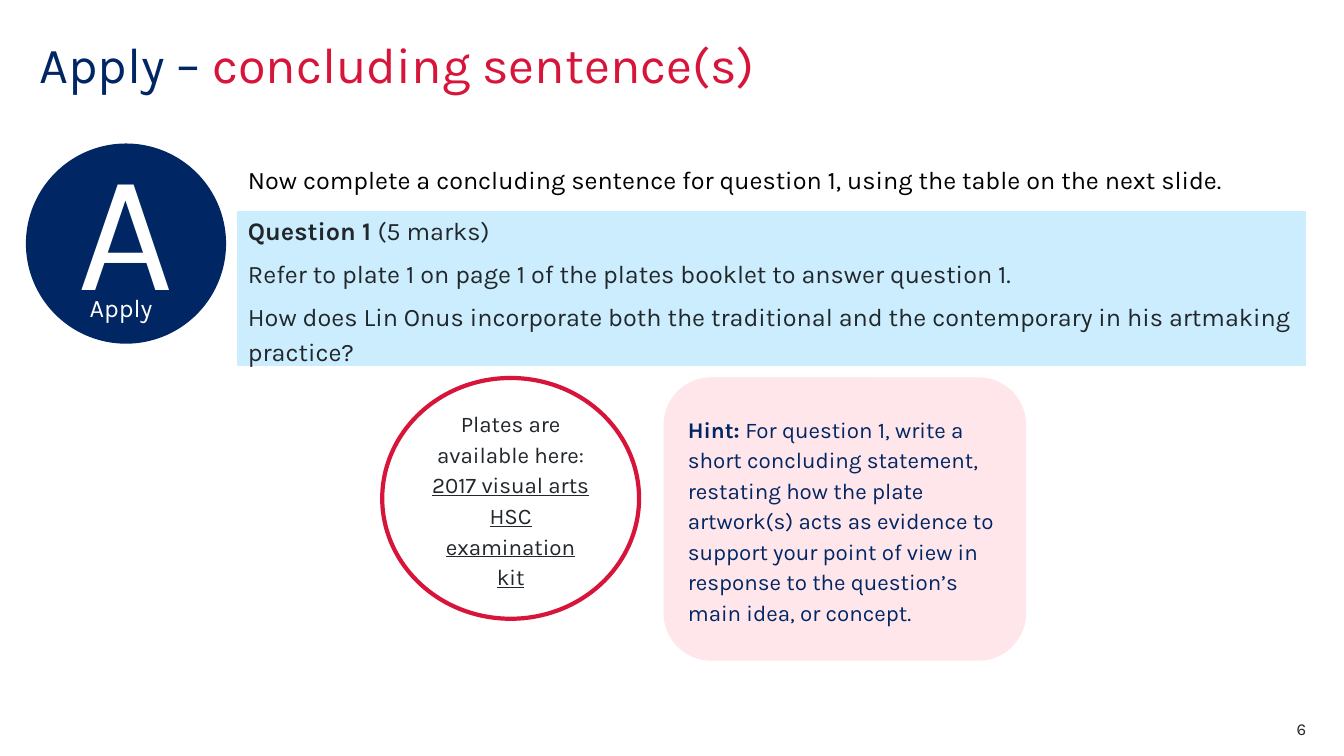
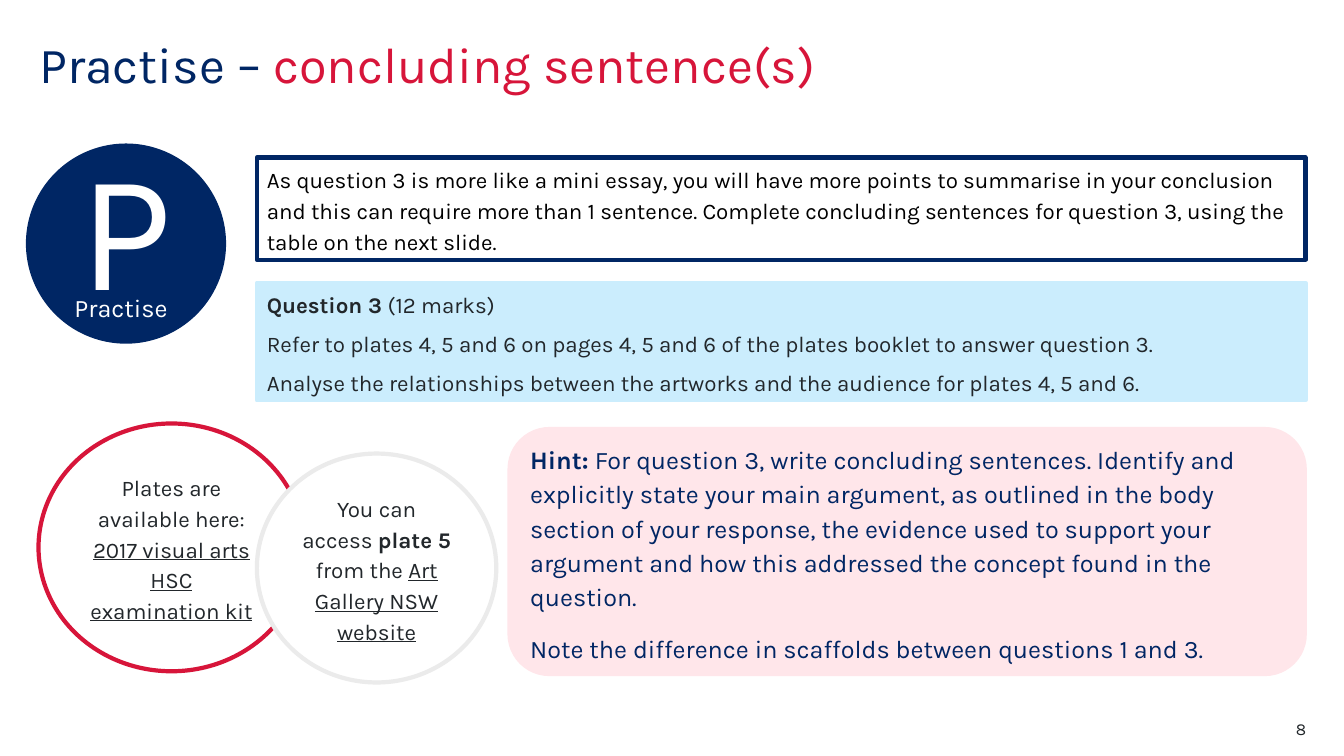
from pptx import Presentation
from pptx.dml.color import RGBColor
from pptx.enum.shapes import MSO_SHAPE
from pptx.enum.text import MSO_ANCHOR, PP_ALIGN
from pptx.util import Pt

FONT = "Karla"
NAVY = "002664"
RED = "D7153A"
INK = "22272B"
BLACK = "000000"
WHITE = "FFFFFF"
GREY = "EBEBEB"
PALE_BLUE = "CBEDFD"
PALE_PINK = "FFE6EA"

BOLD = "bold"
UNDERLINE = "underline"

KIT_LINK = [
    [("Plates are available here:",)],
    [("2017 visual arts HSC examination kit", UNDERLINE)],
]


def color(hex_string):
    return RGBColor.from_string(hex_string)


def write(frame, paragraphs, size, ink, align=PP_ALIGN.LEFT, spacing=1.0, gap=0):
    """Fill a frame; a paragraph is a list of (text, BOLD, UNDERLINE or a colour)."""
    frame.word_wrap = True
    for index, runs in enumerate(paragraphs):
        paragraph = frame.paragraphs[0] if index == 0 else frame.add_paragraph()
        paragraph.alignment = align
        paragraph.line_spacing = spacing
        if index:
            paragraph.space_before = Pt(gap)
        for text, *styles in runs:
            run = paragraph.add_run()
            run.text = text
            font = run.font
            font.name, font.size = FONT, Pt(size)
            font.bold = BOLD in styles
            font.underline = UNDERLINE in styles
            tints = [style for style in styles if style not in (BOLD, UNDERLINE)]
            font.color.rgb = color(tints[0] if tints else ink)


def add_label(shapes, box, paragraphs, size, ink, inset=(0, 0), **layout):
    label = shapes.add_textbox(*map(Pt, box))
    frame = label.text_frame
    frame.margin_left = frame.margin_right = Pt(inset[0])
    frame.margin_top = frame.margin_bottom = Pt(inset[1])
    write(frame, paragraphs, size, ink, **layout)


def add_panel(shapes, kind, box, fill, line, line_width, anchor=MSO_ANCHOR.MIDDLE):
    panel = shapes.add_shape(kind, *map(Pt, box))
    panel.shadow.inherit = False
    panel.fill.solid()
    panel.fill.fore_color.rgb = color(fill)
    panel.line.color.rgb = color(line)
    panel.line.width = Pt(line_width)
    panel.text_frame.vertical_anchor = anchor
    return panel


def add_stage_badge(slide, stage):
    """Navy circle with the stage's initial above its name."""
    badge = slide.shapes.add_group_shape()
    circle = add_panel(badge.shapes, MSO_SHAPE.OVAL, (19, 103, 142, 142), NAVY, NAVY, 1)
    circle.text_frame.margin_bottom = Pt(32)
    write(circle.text_frame, [[(stage[0],)]], 120, WHITE, PP_ALIGN.CENTER)
    add_label(badge.shapes, (46.5, 209, 80, 34), [[(stage,)]], 18, WHITE,
              align=PP_ALIGN.CENTER)


def add_question(slide, box, paragraphs, size, line_width, anchor):
    panel = add_panel(slide.shapes, MSO_SHAPE.RECTANGLE, box, PALE_BLUE, PALE_BLUE,
                      line_width, anchor)
    write(panel.text_frame, paragraphs, size, INK, spacing=1.14, gap=6)


def add_resource(slide, box, outline, paragraphs):
    ring = add_panel(slide.shapes, MSO_SHAPE.OVAL, box, WHITE, outline, 3)
    write(ring.text_frame, paragraphs, 16, INK, PP_ALIGN.CENTER, 1.14)


def add_hint(slide, box, paragraphs, size):
    panel = add_panel(slide.shapes, MSO_SHAPE.ROUNDED_RECTANGLE, box, PALE_PINK, PALE_PINK, 1)
    write(panel.text_frame, paragraphs, size, NAVY, spacing=1.14, gap=12)


def start_slide(deck, stage, number):
    """Add a slide with the shared title, badge and page number."""
    slide = deck.slides.add_slide(deck.slide_layouts[6])
    title = [[(f"{stage} – ",), ("concluding sentence(s)", RED)]]
    add_label(slide.shapes, (28, 28.5, 794, 79), title, 36, NAVY, spacing=0.9)
    add_stage_badge(slide, stage)
    add_label(slide.shapes, (876, 513.5, 57, 14.5), [[(str(number),)]], 12, INK,
              align=PP_ALIGN.RIGHT)
    return slide


def build_apply(deck):
    slide = start_slide(deck, "Apply", 6)
    task = "Now complete a concluding sentence for question 1, using the table on the next slide."
    add_label(slide.shapes, (170, 114, 785, 29), [[(task,)]], 18, BLACK, inset=(7.2, 3.6))
    add_question(slide, (170, 151.5, 762.5, 109.5), [
        [("Question 1 ", BOLD), ("(5 marks)",)],
        [("Refer to plate 1 on page 1 of the plates booklet to answer question 1.",)],
        [("How does Lin Onus incorporate both the traditional and the contemporary "
          "in his artmaking practice?",)],
    ], 18, 1, MSO_ANCHOR.MIDDLE)
    add_resource(slide, (273, 270, 183.5, 172), RED, KIT_LINK)
    add_hint(slide, (474.5, 270, 258, 201.5), [
        [("Hint: ", BOLD),
         ("For question 1, write a short concluding statement, restating how the plate "
          "artwork(s) acts as evidence to support your point of view in response to the "
          "question’s main idea, or concept.",)],
    ], 16)


def build_practise(deck):
    slide = start_slide(deck, "Practise", 8)
    task = add_panel(slide.shapes, MSO_SHAPE.RECTANGLE, (183.5, 112.5, 749, 73), WHITE, NAVY, 3)
    write(task.text_frame, [
        [("As question 3 is more like a mini essay, you will have more points to summarise "
          "in your conclusion and this can require more than 1 sentence. Complete concluding "
          "sentences for question 3, using the table on the next slide.",)],
    ], 16, BLACK, spacing=1.14)
    add_question(slide, (183.5, 202, 749, 84), [
        [("Question 3 ", BOLD), ("(12 marks)",)],
        [("Refer to plates 4, 5 and 6 on pages 4, 5 and 6 of the plates booklet "
          "to answer question 3.",)],
        [("Analyse the relationships between the artworks and the audience "
          "for plates 4, 5 and 6.",)],
    ], 16, 3, MSO_ANCHOR.TOP)
    add_resource(slide, (27.5, 302.5, 190, 177), RED, KIT_LINK)
    add_resource(slide, (183.5, 324, 171, 163.5), GREY, [
        [("You can access ",), ("plate 5", BOLD)],
        [("from the ",), ("Art Gallery NSW website", UNDERLINE)],
    ])
    add_hint(slide, (363, 305.5, 570, 177), [
        [("Hint: ", BOLD),
         ("For question 3, write concluding sentences. Identify and explicitly state your "
          "main argument, as outlined in the body section of your response, the evidence "
          "used to support your argument and how this addressed the concept found in the "
          "question.",)],
        [("Note the difference in scaffolds between questions 1 and 3.",)],
    ], 18)


def main():
    deck = Presentation()
    deck.slide_width, deck.slide_height = Pt(960), Pt(540)
    build_apply(deck)
    build_practise(deck)
    deck.save("out.pptx")


if __name__ == "__main__":
    main()
